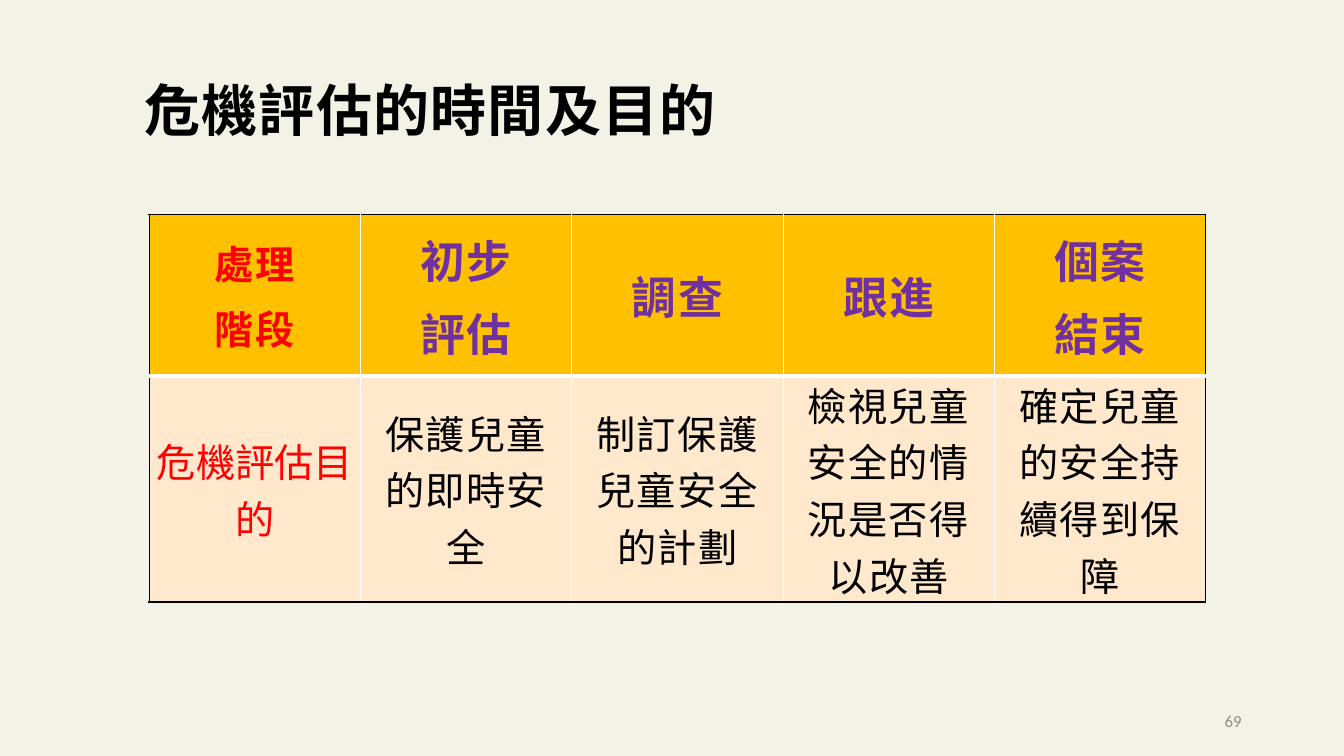
import pptx
import pptx.util
import pptx.dml.color
import pptx.enum.text
import pptx.oxml.ns
from lxml import etree

Pt = pptx.util.Pt
ALIGN = pptx.enum.text.PP_ALIGN
MIDDLE = pptx.enum.text.MSO_ANCHOR.MIDDLE
BLACK, WHITE, RED, PURPLE = "000000", "FFFFFF", "FF0000", "7030A0"
GOLD, PEACH = "FFC000", "FFE8CC"

HEADERS = ["處理\n階段", "初步\n評估", "調查", "跟進", "個案\n結束"]
PURPOSES = ["危機評估目的", "保護兒童的即時安全", "制訂保護兒童安全的計劃",
            "檢視兒童安全的情況是否得以改善", "確定兒童的安全持續得到保障"]


def color(value):
    return pptx.dml.color.RGBColor.from_string(value)


def write(tf, text, size, ink=BLACK, bold=False, align=ALIGN.LEFT,
          gap=0, line=None, spacing=0):
    """Fill a text frame, one paragraph per line of text."""
    for i, part in enumerate(text.split("\n")):
        p = tf.add_paragraph() if i else tf.paragraphs[0]
        p.alignment = align
        if i:
            p.space_before = Pt(gap)
        if line:
            p.line_spacing = line
        r = p.add_run()
        r.text = part
        r.font.name = "Calibri"
        r.font.size = Pt(size)
        r.font.bold = bold
        r.font.color.rgb = color(ink)
        if spacing:
            r.font._element.set("spc", str(spacing * 100))


class SlideBuilder:
    def __init__(self, prs, background):
        self.slide = prs.slides.add_slide(prs.slide_layouts[6])
        fill = self.slide.background.fill
        fill.solid()
        fill.fore_color.rgb = color(background)

    def text(self, x, y, w, h, text, size, **style):
        sp = self.slide.shapes.add_textbox(Pt(x), Pt(y), Pt(w), Pt(h))
        tf = sp.text_frame
        tf.word_wrap = True
        tf.vertical_anchor = MIDDLE
        write(tf, text, size, **style)

    def table(self, x, y, col_width, row_heights, columns):
        frame = self.slide.shapes.add_table(
            len(row_heights), columns, Pt(x), Pt(y),
            Pt(col_width * columns), Pt(sum(row_heights)))
        table = frame.table
        table.horz_banding = False
        for col in table.columns:
            col.width = Pt(col_width)
        for row, height in zip(table.rows, row_heights):
            row.height = Pt(height)
        return table

    def cell(self, cell, text, size, fill, borders, **style):
        cell.margin_left = cell.margin_right = Pt(5)
        cell.margin_top = cell.margin_bottom = Pt(0)
        cell.vertical_anchor = MIDDLE
        cell.fill.solid()
        cell.fill.fore_color.rgb = color(fill)
        write(cell.text_frame, text, size, align=ALIGN.CENTER, **style)
        self.borders(cell, borders)

    def borders(self, cell, borders):
        """Add cell edges, given in the order left, right, top, bottom."""
        qn = pptx.oxml.ns.qn
        props = cell._tc.get_or_add_tcPr()
        for i, (side, (ink, width)) in enumerate(zip("LRTB", borders)):
            ln = etree.Element(qn("a:ln" + side), w=str(Pt(width)))
            solid = etree.SubElement(ln, qn("a:solidFill"))
            etree.SubElement(solid, qn("a:srgbClr"), val=ink)
            props.insert(i, ln)


def main():
    prs = pptx.Presentation()
    prs.slide_width, prs.slide_height = Pt(960), Pt(540)
    s = SlideBuilder(prs, "F3F2E6")
    s.text(96, 29, 798, 104, "危機評估的時間及目的", 40, bold=True,
           line=0.9, spacing=1)

    last = len(HEADERS) - 1
    table = s.table(106.5, 153.5, 151, [115, 161.5], len(HEADERS))
    for i, (header, purpose) in enumerate(zip(HEADERS, PURPOSES)):
        sides = [(BLACK if i == 0 else WHITE, 1),
                 (BLACK if i == last else WHITE, 1)]
        s.cell(table.cell(0, i), header, 32 if i else 28, GOLD,
               sides + [(BLACK, 1), (WHITE, 3)],
               ink=PURPLE if i else RED, bold=True, gap=6, spacing=1)
        s.cell(table.cell(1, i), purpose, 28, PEACH,
               sides + [(WHITE, 3), (BLACK, 1)],
               ink=BLACK if i else RED, spacing=1 if i else 0)

    s.text(678, 500.5, 216, 29, "69", 12, ink="8C8C8C", align=ALIGN.RIGHT)
    prs.save("out.pptx")


if __name__ == "__main__":
    main()
